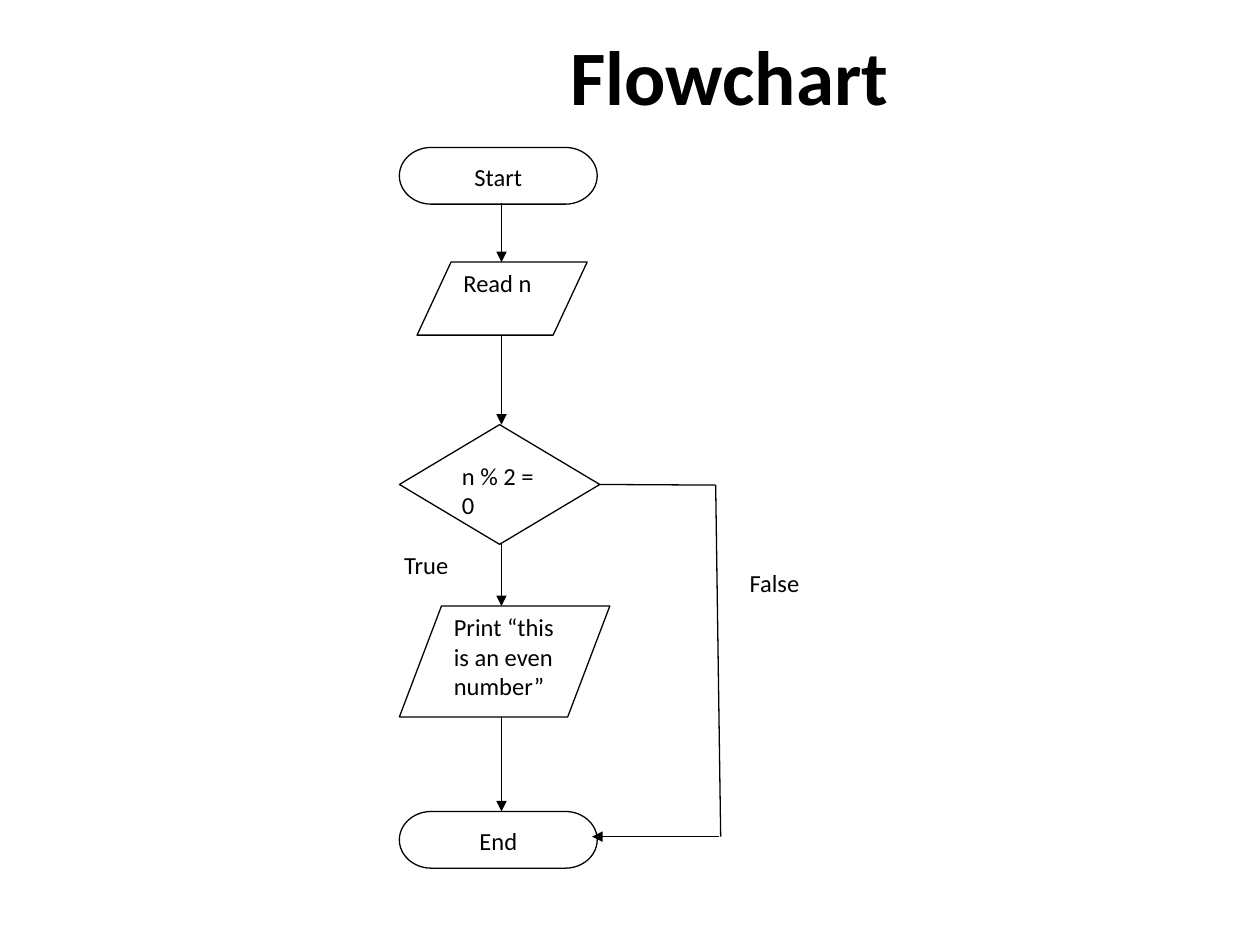
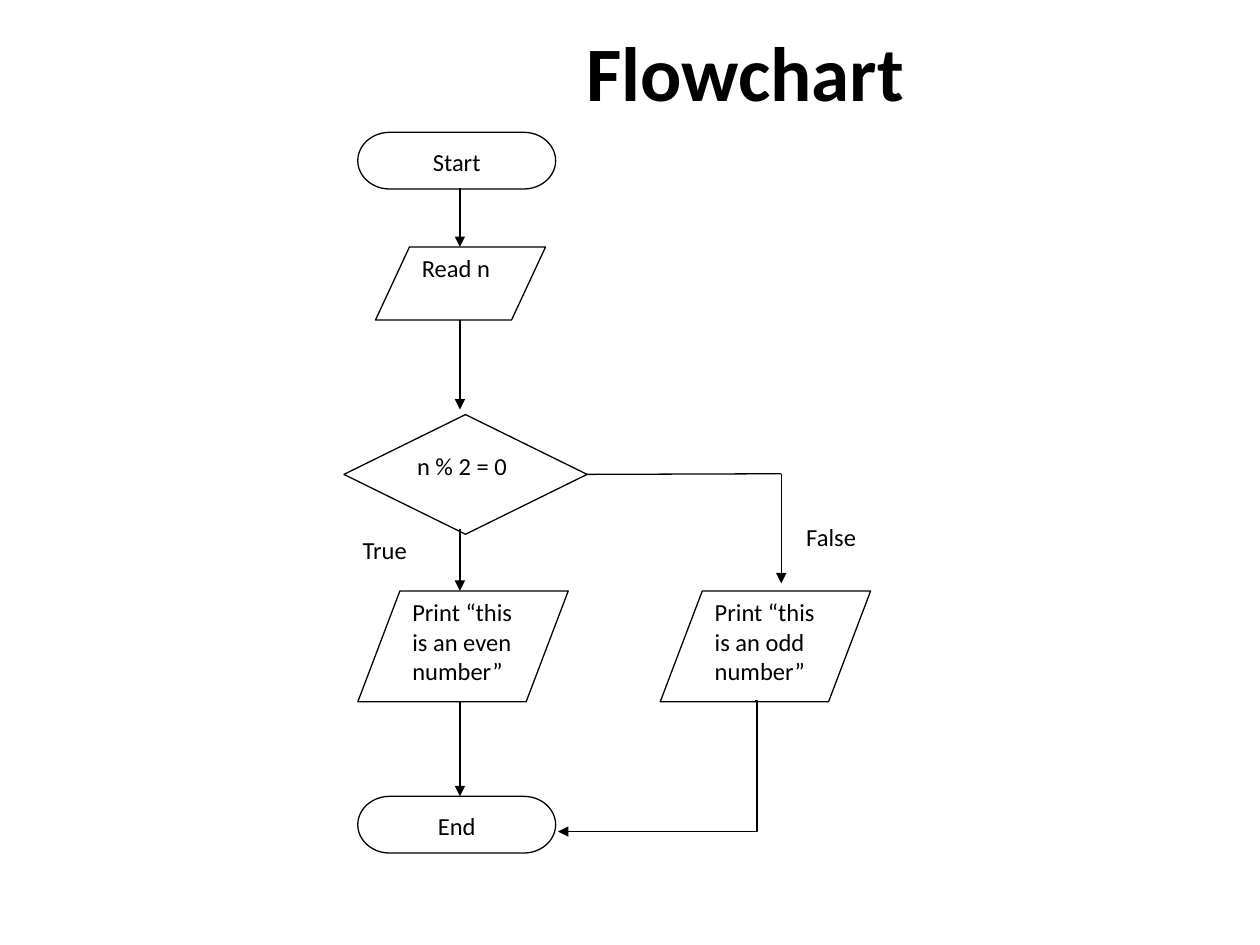
from lxml import etree
from pptx import Presentation
from pptx.dml.color import RGBColor
from pptx.enum.shapes import MSO_CONNECTOR, MSO_SHAPE
from pptx.enum.text import MSO_ANCHOR, MSO_AUTO_SIZE, PP_ALIGN
from pptx.oxml.ns import qn
from pptx.util import Inches, Pt

BLACK = RGBColor(0, 0, 0)
WHITE = RGBColor(255, 255, 255)
FONT = "Calibri"
TERMINATOR = MSO_SHAPE.FLOWCHART_TERMINATOR
DATA = MSO_SHAPE.FLOWCHART_DATA
DECISION = MSO_SHAPE.FLOWCHART_DECISION
LABEL = MSO_SHAPE.RECTANGLE
PRINT_SIZE = (1.67, 0.88)
LABEL_SIZE = (0.68, 0.3)


def add_step(slide, text, kind, box, align=PP_ALIGN.LEFT, outlined=True):
    """Add a flowchart symbol or branch label; box is left, top, width, height."""
    step = slide.shapes.add_shape(kind, *map(Inches, box))
    step.shadow.inherit = False
    step.fill.solid()
    step.fill.fore_color.rgb = WHITE
    if outlined:
        step.line.color.rgb = BLACK
        step.line.width = Pt(0.75)
    else:
        step.line.fill.background()
    step.text_frame.vertical_anchor = MSO_ANCHOR.TOP
    paragraph = step.text_frame.paragraphs[0]
    paragraph.text = text
    paragraph.alignment = align
    paragraph.space_after = Pt(10)
    paragraph.font.name = FONT
    paragraph.font.size = Pt(14)
    paragraph.font.color.rgb = BLACK
    return step


def add_flow(slide, start, end, arrow=True, kind=MSO_CONNECTOR.STRAIGHT):
    flow = slide.shapes.add_connector(kind, *map(Inches, (*start, *end)))
    flow.line.color.rgb = BLACK
    flow.line.width = Pt(0.75)
    if arrow:
        etree.SubElement(flow.line._get_or_add_ln(), qn("a:tailEnd"), type="triangle")
    etree.SubElement(flow._element.spPr, qn("a:effectLst"))
    return flow


prs = Presentation()
prs.slide_width, prs.slide_height = Inches(10), Inches(7.5)

# Title box, shift of the main column, decision box, place of "False", corner of the false branch
charts = [
    ((4.08, 0.21, 3.42, 0.76), (0, 0), (3.17, 3.37, 1.59, 0.95), (5.85, 4.46), (5.68, 3.85)),
    ((4.12, 0.14, 3.59, 0.84), (-0.33, -0.12), (2.73, 3.29, 1.93, 0.95), (6.3, 4.09), (6.2, 3.76)),
]
main_steps = [
    ("Start", TERMINATOR, (3.17, 1.17, 1.57, 0.45), PP_ALIGN.CENTER),
    ("Read n", DATA, (3.31, 2.08, 1.35, 0.58), PP_ALIGN.LEFT),
    ("Print “this is an even number”", DATA, (3.17, 4.81, *PRINT_SIZE), PP_ALIGN.LEFT),
    ("End", TERMINATOR, (3.17, 6.44, 1.57, 0.45), PP_ALIGN.CENTER),
]
main_flow_x = 3.98
main_flows = [(1.61, 2.08), (2.66, 3.37), (4.32, 4.81), (5.69, 6.44)]

slides = []
for title_box, (dx, dy), decision_box, false_place, corner in charts:
    slide = prs.slides.add_slide(prs.slide_layouts[5])
    slides.append(slide)

    title = slide.shapes.title
    title.left, title.top, title.width, title.height = map(Inches, title_box)
    title.text_frame.auto_size = MSO_AUTO_SIZE.NONE
    title.text_frame.vertical_anchor = MSO_ANCHOR.MIDDLE
    heading = title.text_frame.paragraphs[0]
    heading.text = "Flowchart"
    heading.alignment = PP_ALIGN.CENTER
    heading.font.name = FONT
    heading.font.size = Pt(44)
    heading.font.bold = True
    heading.font.color.rgb = BLACK

    for text, kind, (left, top, width, height), align in main_steps:
        add_step(slide, text, kind, (left + dx, top + dy, width, height), align)
    decision = add_step(slide, "n % 2 = 0", DECISION, decision_box)

    for top, bottom in main_flows:
        add_flow(slide, (main_flow_x + dx, top + dy), (main_flow_x + dx, bottom + dy))

    add_step(slide, "True", LABEL, (3.11 + dx, 4.32 + dy, *LABEL_SIZE), outlined=False)
    add_step(slide, "False", LABEL, (*false_place, *LABEL_SIZE), outlined=False)

    decision_right = (decision_box[0] + decision_box[2], corner[1])
    false_exit = add_flow(slide, decision_right, corner, arrow=False)
    false_exit.begin_connect(decision, 3)

# False branch straight to the end
even_only, even_or_odd = slides
add_flow(even_only, (5.68, 3.85), (5.72, 6.64), arrow=False)
add_flow(even_only, (5.71, 6.64), (4.7, 6.64))

# False branch through the odd-number message
add_flow(even_or_odd, (6.2, 3.76), (6.2, 4.63))
add_step(even_or_odd, "Print “this is an odd number”", DATA, (5.24, 4.69, *PRINT_SIZE))
odd_to_end = add_flow(even_or_odd, (5.99, 5.56), (4.43, 6.6), kind=MSO_CONNECTOR.ELBOW)
bend = odd_to_end._element.spPr.find(qn("a:prstGeom")).find(qn("a:avLst"))
etree.SubElement(bend, qn("a:gd"), name="adj1", fmla="val -1300")

prs.save("out.pptx")
